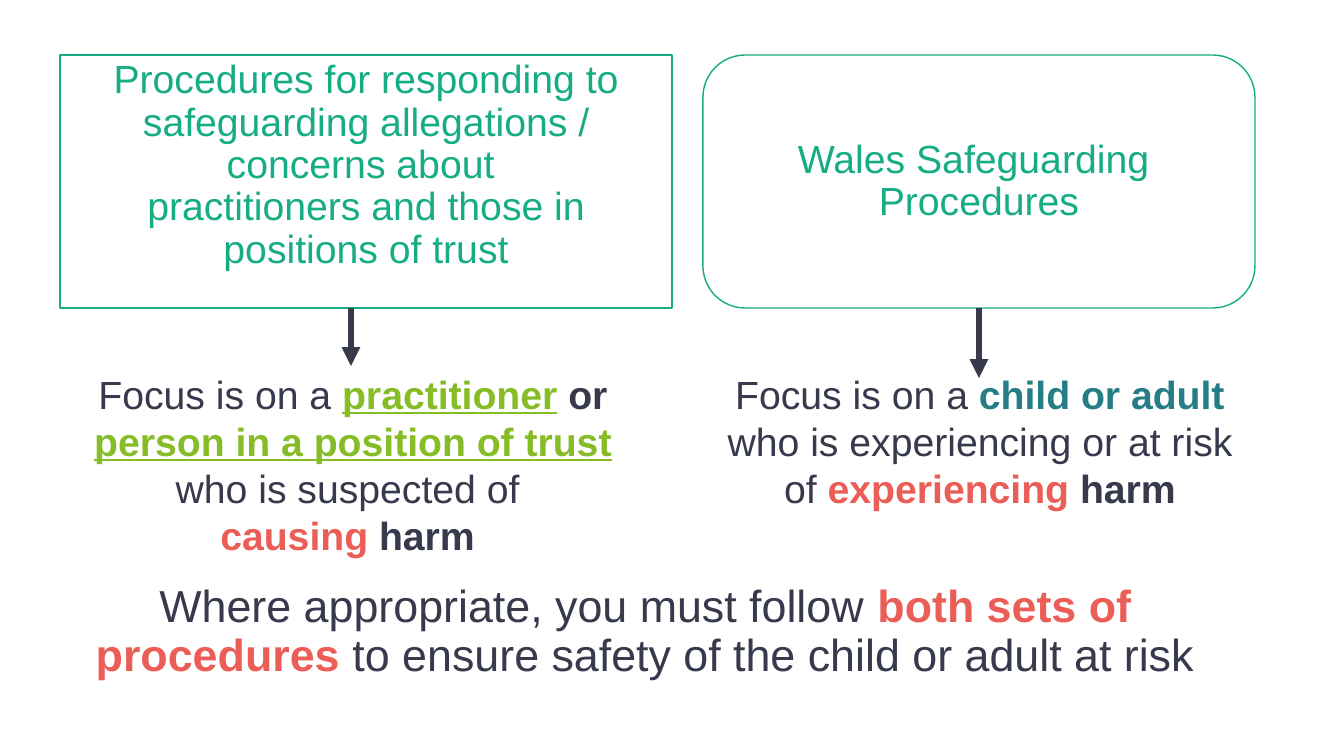
import lxml.etree
import pptx
import pptx.dml.color
import pptx.enum.shapes
import pptx.enum.text
import pptx.oxml.ns
import pptx.util

EMU_PER_PX = 914400 / 100.8

INK = pptx.dml.color.RGBColor(0x37, 0x39, 0x4C)
GREEN = pptx.dml.color.RGBColor(0x16, 0xAD, 0x85)
LIME = pptx.dml.color.RGBColor(0x86, 0xBC, 0x25)
TEAL = pptx.dml.color.RGBColor(0x25, 0x7D, 0x86)
CORAL = pptx.dml.color.RGBColor(0xEB, 0x5E, 0x57)
WHITE = pptx.dml.color.RGBColor(0xFF, 0xFF, 0xFF)

ANCHOR = pptx.enum.text.MSO_ANCHOR
BOX_TOP, BOX_HEIGHT = 55, 253
BOX_BOTTOM = BOX_TOP + BOX_HEIGHT
FOCUS_TOP, FOCUS_WIDTH = 365, 554


def px(length):
    return pptx.util.Emu(round(length * EMU_PER_PX))


def place(shape, left, top, width, height):
    shape.left, shape.top = px(left), px(top)
    shape.width, shape.height = px(width), px(height)


def write(shape, pieces, size, color, spacing=1.0, after=0, anchor=ANCHOR.TOP):
    """Fill a shape with one centred paragraph of (text, accent, underline) pieces.

    A piece with an accent colour is bold; a line feed makes a line break.
    """
    frame = shape.text_frame
    frame.word_wrap = True
    frame.auto_size = pptx.enum.text.MSO_AUTO_SIZE.NONE
    frame.vertical_anchor = anchor
    paragraph = frame.paragraphs[0]
    paragraph.alignment = pptx.enum.text.PP_ALIGN.CENTER
    paragraph.line_spacing = spacing
    paragraph.space_before = pptx.util.Pt(0)
    paragraph.space_after = pptx.util.Pt(after)
    properties = paragraph._p.get_or_add_pPr()
    properties.set("marL", "0")
    properties.set("indent", "0")
    lxml.etree.SubElement(properties, pptx.oxml.ns.qn("a:buNone"))
    paragraph.font.name = "Arial"
    paragraph.font.size = pptx.util.Pt(size)
    paragraph.font.color.rgb = color
    for text, accent, underline in pieces:
        for number, line in enumerate(text.split("\n")):
            if number:
                paragraph.add_line_break()
            if not line:
                continue
            run = paragraph.add_run()
            run.text = line
            if accent is not None:
                run.font.bold = True
                run.font.color.rgb = accent
            if underline:
                run.font.underline = True


def outline(shape):
    shape.fill.solid()
    shape.fill.fore_color.rgb = WHITE
    shape.line.color.rgb = GREEN
    shape.line.width = pptx.util.Pt(1)


def add_focus(slide, left, height, pieces):
    focus = slide.shapes.add_textbox(
        px(left), px(FOCUS_TOP), px(FOCUS_WIDTH), px(height))
    write(focus, pieces, 28, INK, after=12)


def add_arrow(slide, x, bottom):
    arrow = slide.shapes.add_connector(
        pptx.enum.shapes.MSO_CONNECTOR.STRAIGHT,
        px(x), px(BOX_BOTTOM), px(x), px(bottom))
    arrow.line.color.rgb = INK
    arrow.line.width = pptx.util.Pt(4.5)
    line = arrow.line._get_or_add_ln()
    lxml.etree.SubElement(line, pptx.oxml.ns.qn("a:tailEnd"), type="triangle")
    lxml.etree.SubElement(
        arrow._element.spPr, pptx.oxml.ns.qn("a:effectLst"))
    return arrow


def main():
    deck = pptx.Presentation()
    deck.slide_width, deck.slide_height = px(1344), px(756)
    slide = deck.slides.add_slide(deck.slide_layouts[1])

    # Practitioner procedures
    practitioner_procedures = slide.shapes.title
    place(practitioner_procedures, 60, BOX_TOP, 612, BOX_HEIGHT)
    outline(practitioner_procedures)
    write(practitioner_procedures, [
        ("Procedures for responding to safeguarding allegations / "
         "concerns about \npractitioners and those in positions of trust",
         None, False),
    ], 28, GREEN, spacing=0.9)

    # Wales procedures
    wales_procedures = slide.shapes.add_shape(
        pptx.enum.shapes.MSO_SHAPE.ROUNDED_RECTANGLE,
        px(703), px(BOX_TOP), px(552), px(BOX_HEIGHT))
    wales_procedures.shadow.inherit = False
    outline(wales_procedures)
    write(wales_procedures, [
        ("Wales Safeguarding \nProcedures", None, False),
    ], 28, GREEN, spacing=0.9, anchor=ANCHOR.MIDDLE)

    # Arrows from each box to its focus
    add_arrow(slide, 351, 366)
    wales_arrow = add_arrow(slide, 979, 378)
    wales_arrow.begin_connect(wales_procedures, 2)

    # Focus of each set of procedures
    add_focus(slide, 76, 201, [
        ("Focus is on a ", None, False),
        ("practitioner", LIME, True),
        (" or ", INK, False),
        ("person in a position of trust ", LIME, True),
        ("who is suspected of \n", None, False),
        ("causing", CORAL, False),
        (" harm ", INK, False),
    ])
    add_focus(slide, 703, 152, [
        ("Focus is on a ", None, False),
        ("child or adult ", TEAL, False),
        ("who is experiencing or at risk of ", None, False),
        ("experiencing", CORAL, False),
        (" harm", INK, False),
    ])

    # Closing message
    closing = slide.placeholders[1]
    place(closing, 35, 579, 1221, 177)
    write(closing, [
        ("Where appropriate, you must follow ", None, False),
        ("both sets of procedures ", CORAL, False),
        ("to ensure safety of the child or adult at risk", None, False),
    ], 32, INK, spacing=0.9, after=12)

    deck.save("out.pptx")


if __name__ == "__main__":
    main()
